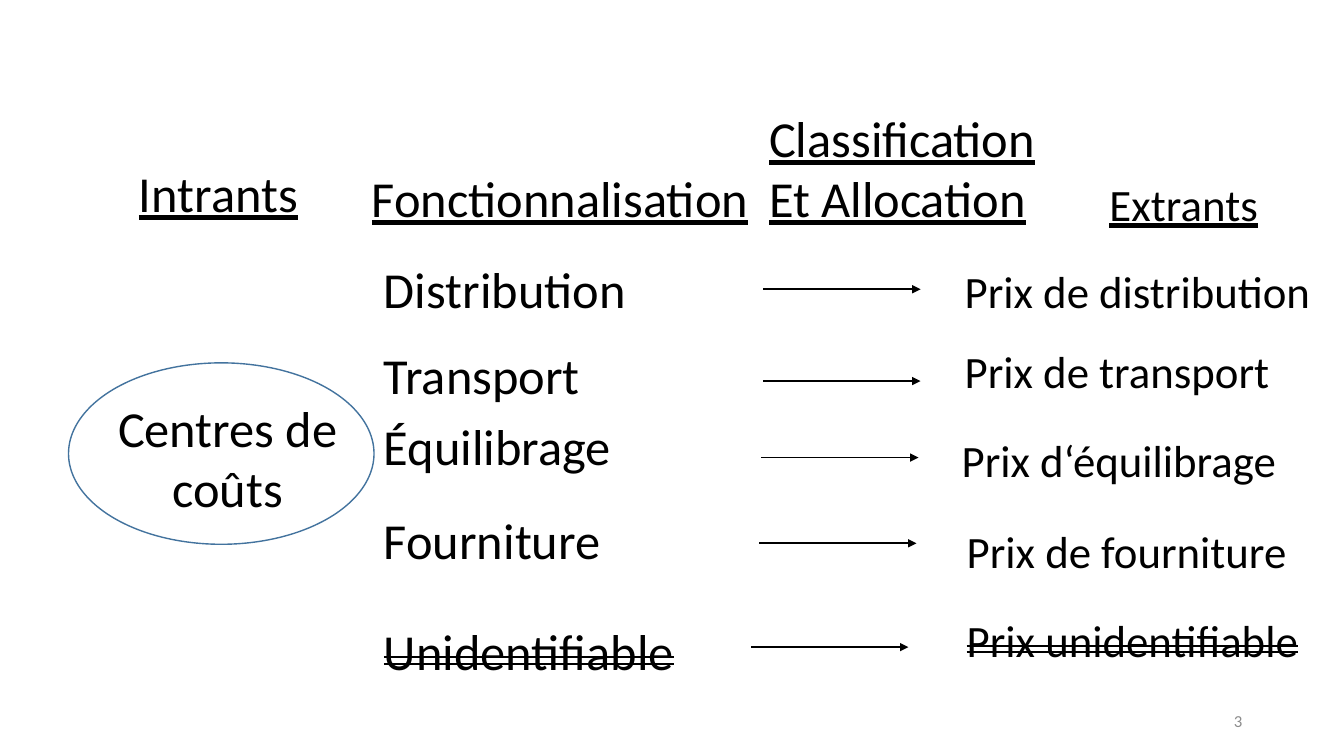
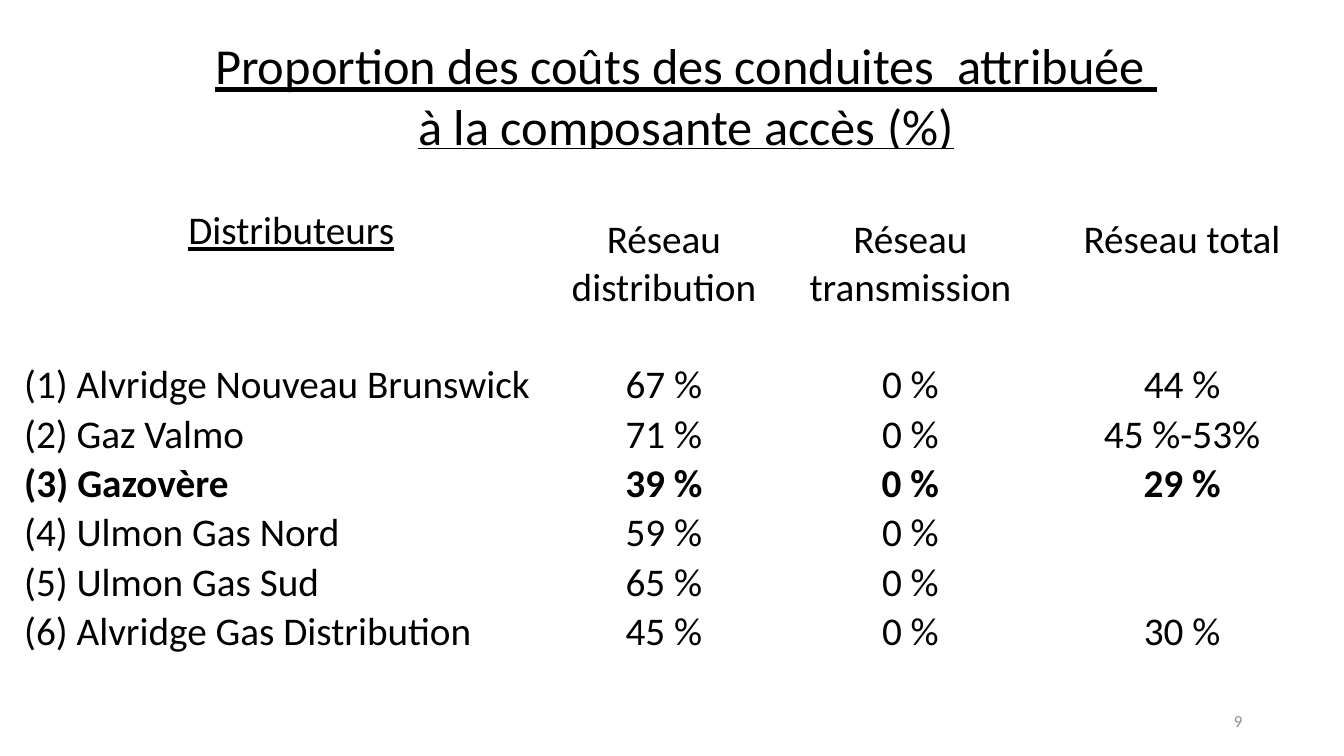
from dataclasses import dataclass

from lxml.etree import SubElement
from pptx import Presentation
from pptx.dml.color import RGBColor as RGB
from pptx.enum.shapes import MSO_CONNECTOR as CONN, MSO_SHAPE as SHAPE
from pptx.enum.text import MSO_ANCHOR as ANCHOR, MSO_AUTO_SIZE as FIT, PP_ALIGN as ALIGN
from pptx.oxml.ns import qn
from pptx.util import Emu, Pt

PX = 9144
SLIDE_W, SLIDE_H = 1333, 750
TITLE_ONLY, BLANK = 5, 6


@dataclass(frozen=True)
class Theme:
    """Colours, font and type sizes of the deck."""
    font: str = "Calibri"
    ink: RGB = RGB(0, 0, 0)
    paper: RGB = RGB(255, 255, 255)
    muted: RGB = RGB(0x8C, 0x8C, 0x8C)
    outline: RGB = RGB(0x43, 0x73, 0x9E)
    title: int = 36
    price: int = 32
    cell: int = 28
    footer: int = 12


T = Theme()

LANES = [
    ("Distribution", 90, "Prix de distribution", (576, 96), (386, 126)),
    ("Transport", 175, "Prix de transport", (576, 175), (386, 217)),
    ("Équilibrage", 246, "Prix d‘équilibrage", (573, 263), (384, 293)),
    ("Fourniture", 339, "Prix de fourniture", (578, 354), (382, 378)),
    ("Unidentifiable", 449, "Prix unidentifiable", (578, 442), (374, 481)),
]
NETWORKS = ["Réseau distribution", "Réseau transmission", "Réseau total"]
SHARES = [
    ["(1) Alvridge Nouveau Brunswick", "67 %", "0 %", "44 %"],
    ["(2) Gaz Valmo", "71 %", "0 %", "45 %-53%"],
    ["(3) Gazovère", "39 %", "0 %", "29 %"],
    ["(4) Ulmon Gas Nord", "59 %", "0 %", ""],
    ["(5) Ulmon Gas Sud", "65 %", "0 %", ""],
    ["(6) Alvridge Gas Distribution", "45 %", "0 %", "30 %"],
]
HIGHLIGHT = 2


def px(*values):
    """Turn px lengths into EMU."""
    return [Emu(v * PX) for v in values]


def assign(obj, **values):
    """Set several attributes on one object."""
    for name, value in values.items():
        setattr(obj, name, value)


def write(tf, text, size, align=ALIGN.LEFT, color=T.ink, strike=False, **font):
    """Fill a text frame, one paragraph for each line."""
    for i, line in enumerate(text.split("\n")):
        p = tf.add_paragraph() if i else tf.paragraphs[0]
        p.alignment = align
        r = p.add_run()
        r.text = line
        assign(r.font, name=T.font, size=Pt(size), **font)
        r.font.color.rgb = color
        if strike:
            r.font._element.set("strike", "dblStrike")


def label(s, box, text, size=T.title, anchor=ANCHOR.TOP, **style):
    """Add a text box at (x, y, w, h)."""
    tf = s.shapes.add_textbox(*px(*box)).text_frame
    assign(tf, word_wrap=True, vertical_anchor=anchor)
    write(tf, text, size, **style)


def page_number(s, number):
    """Write the page number at the bottom right."""
    label(s, (942, 695, 300, 40), str(number), T.footer, ANCHOR.MIDDLE,
          align=ALIGN.RIGHT, color=T.muted)


def arrow(s, x, y, length=156):
    """Draw a horizontal arrow pointing right."""
    c = s.shapes.add_connector(CONN.STRAIGHT, *px(x, y, x + length, y))
    c.line.color.rgb = T.ink
    c.line.width = Pt(1.25)
    spPr = c.element.spPr
    SubElement(spPr.find(qn("a:ln")), qn("a:tailEnd"), type="triangle")
    SubElement(spPr, qn("a:effectLst"))


def column_heads(s, x, y):
    """Write the four underlined column heads."""
    label(s, (x, y + 55, 200, 71), "Intrants", underline=True)
    label(s, (x + 231, y + 60, 421, 71), "Fonctionnalisation", underline=True)
    label(s, (x + 625, y, 310, 131), "Classification\nEt Allocation", underline=True)
    label(s, (x + 930, y + 69, 232, 64), "Extrants", T.price,
          align=ALIGN.CENTER, underline=True)


def cost_centre(s, x, y):
    """Draw the cost centre ellipse and its caption."""
    sp = s.shapes.add_shape(SHAPE.OVAL, *px(x, y, 303, 180))
    sp.shadow.inherit = False
    sp.fill.background()
    sp.line.color.rgb = T.outline
    sp.line.width = Pt(1)
    label(s, (x + 30, y + 29, 256, 131), "Centres de coûts", align=ALIGN.CENTER)


def price_lanes(s, x, y):
    """Link each function to its price with an arrow."""
    for function, top, price, (price_x, price_y), (arrow_x, arrow_y) in LANES:
        strike = function == "Unidentifiable"
        label(s, (x, y + top, 330, 71), function, strike=strike)
        arrow(s, x + arrow_x, y + arrow_y)
        label(s, (x + price_x, y + price_y, 377, 64), price, T.price, strike=strike)


def share_title(s, box):
    """Move and format the title placeholder."""
    sp = s.shapes.title
    assign(sp, **dict(zip(("left", "top", "width", "height"), px(*box))))
    tf = sp.text_frame
    assign(tf, word_wrap=True, auto_size=FIT.NONE, vertical_anchor=ANCHOR.TOP)
    write(tf, "Proportion des coûts des conduites  attribuée \nà la composante accès (%)",
          T.title, ALIGN.CENTER, underline=True)


def share_table(s, x, y):
    """Build the table of cost shares by distributor."""
    widths = [532, 207, 282, 257, 8]
    heights = [66, 95, 96] + [49] * 5
    table = s.shapes.add_table(len(heights), len(widths),
                               *px(x, y, sum(widths), sum(heights))).table
    assign(table, first_row=False, horz_banding=False)
    for column, width in zip(table.columns, px(*widths)):
        column.width = width
    for row, height in zip(table.rows, px(*heights)):
        row.height = height
    for cell in table.iter_cells():
        cell.fill.solid()
        cell.fill.fore_color.rgb = T.paper
        left, bottom = px(1, 0)
        assign(cell, margin_left=left, margin_right=left, margin_top=left,
               margin_bottom=bottom, vertical_anchor=ANCHOR.BOTTOM)

    heading = table.cell(0, 0)
    heading.merge(table.cell(1, 0))
    heading.vertical_anchor = ANCHOR.MIDDLE
    write(heading.text_frame, "Distributeurs", T.cell, ALIGN.CENTER, underline=True)
    table.cell(0, 1).merge(table.cell(0, 3))
    for j, network in enumerate(NETWORKS, 1):
        cell = table.cell(1, j)
        cell.vertical_anchor = ANCHOR.TOP
        write(cell.text_frame, network, T.cell, ALIGN.CENTER)
    for i, row in enumerate(SHARES):
        for j, text in enumerate(row):
            if text:
                write(table.cell(i + 2, j).text_frame, text, T.cell,
                      ALIGN.CENTER if j else ALIGN.LEFT, bold=i == HIGHLIGHT)


def flow_slide(prs):
    """Build the slide from inputs to outputs."""
    s = prs.slides.add_slide(prs.slide_layouts[BLANK])
    column_heads(s, 128, 101)
    cost_centre(s, 68, 360)
    price_lanes(s, 371, 161)
    page_number(s, 3)


def share_slide(prs):
    """Build the slide of cost shares."""
    s = prs.slides.add_slide(prs.slide_layouts[TITLE_ONLY])
    share_table(s, 23, 148)
    share_title(s, (170, 29, 1021, 162))
    page_number(s, 9)


def main():
    """Build and save the deck."""
    prs = Presentation()
    prs.slide_width, prs.slide_height = px(SLIDE_W, SLIDE_H)
    flow_slide(prs)
    share_slide(prs)
    prs.save("out.pptx")


if __name__ == "__main__":
    main()
